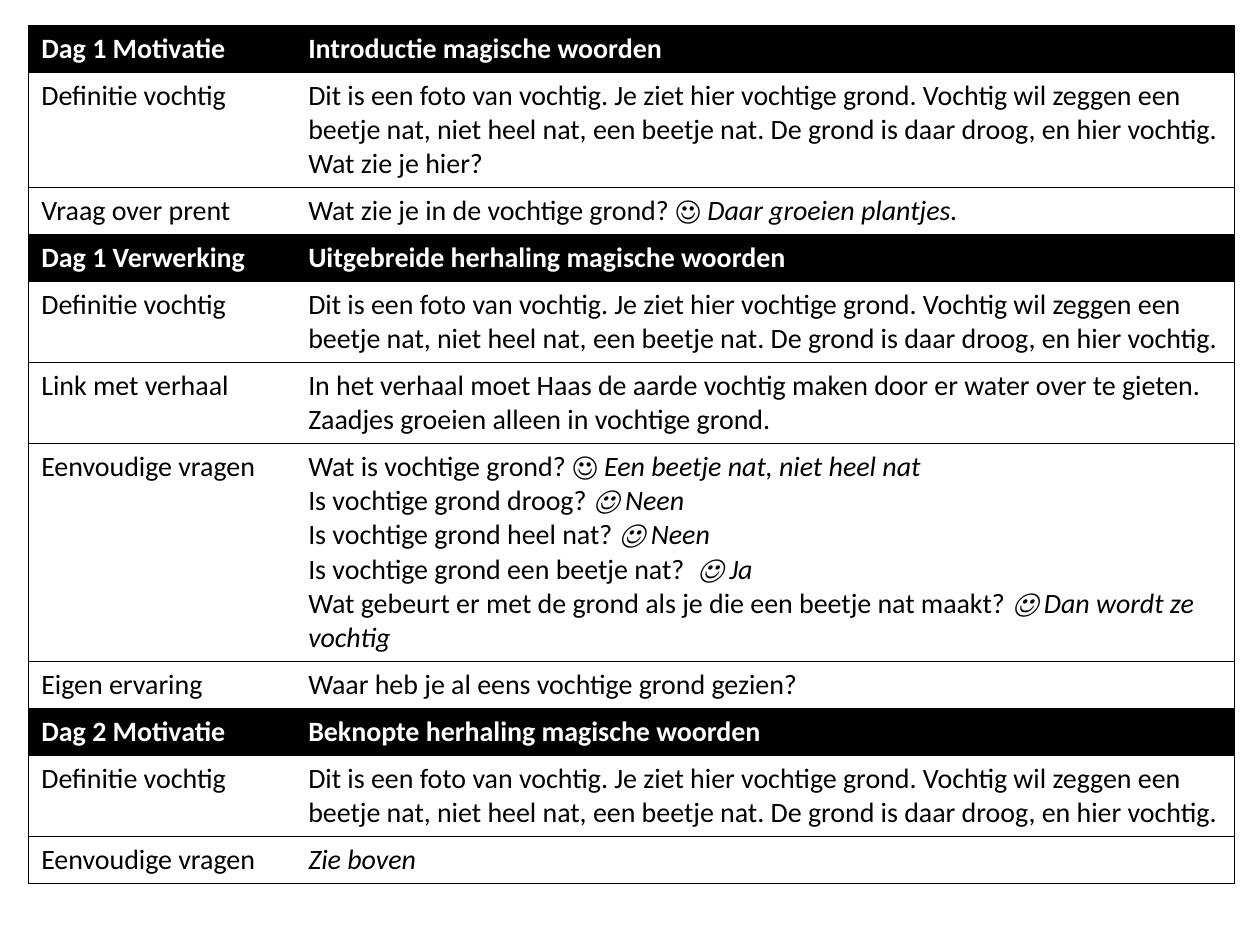
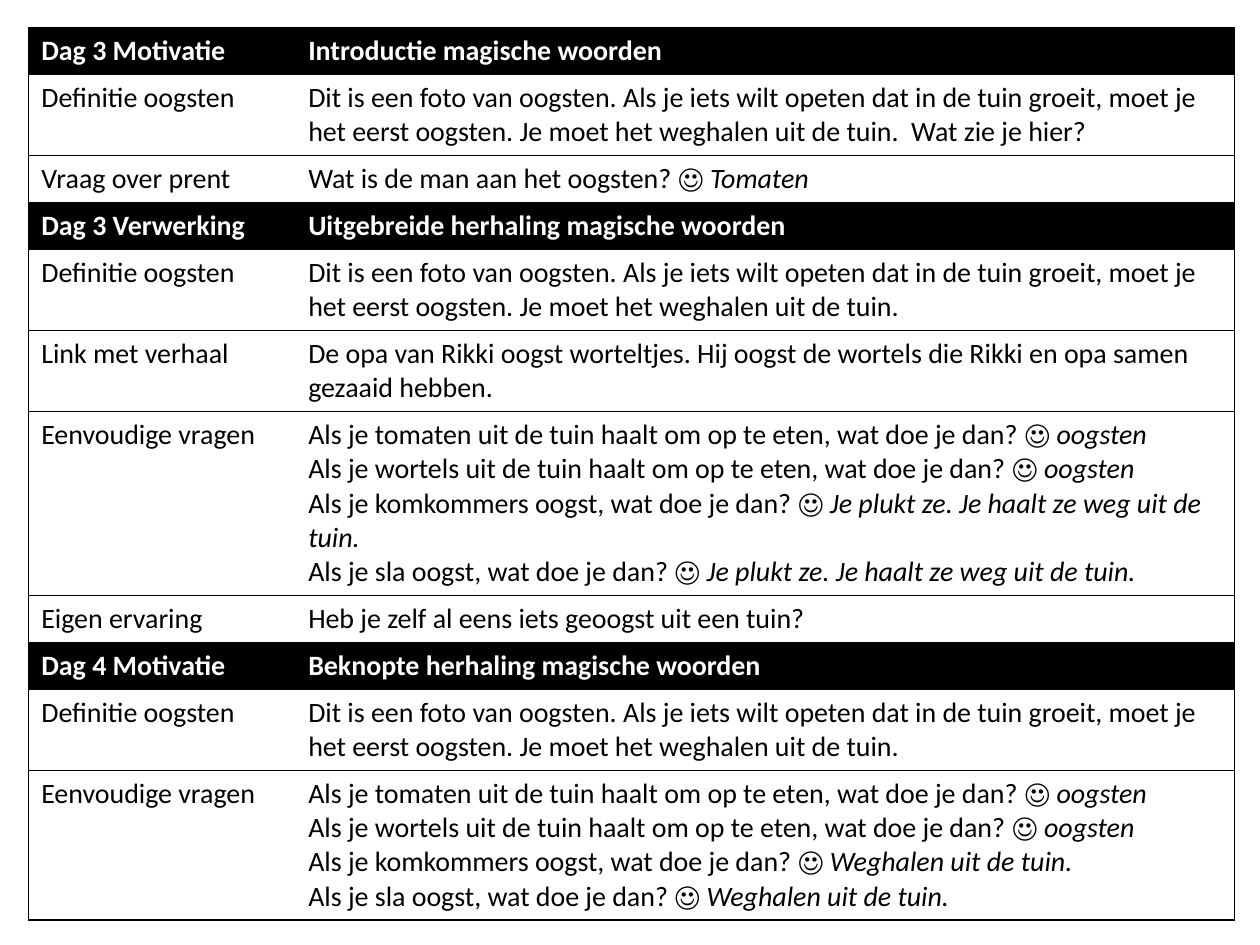
from lxml import etree
from pptx import Presentation
from pptx.dml.color import RGBColor
from pptx.enum.text import MSO_ANCHOR
from pptx.oxml.ns import qn
from pptx.util import Cm, Pt

TOP = MSO_ANCHOR.TOP
BLACK, WHITE = "000000", "FFFFFF"
SMILE = "☺"


def rgb(hex_code):
    return RGBColor.from_string(hex_code)


class Deck:
    """Holds the table style and the current slide."""

    font, size, line_width = "Calibri", Pt(16), Pt(0.75)
    left, columns = Cm(0.58), (Cm(5.38), Cm(18.92))
    min_row = Cm(0.86)  # rows grow with their text

    def __init__(self):
        self.prs = Presentation()
        self.prs.slide_width, self.prs.slide_height = Cm(25.4), Cm(19.05)
        self.s = None

    def slide(self):
        self.s = self.prs.slides.add_slide(self.prs.slide_layouts[6])

    def borders(self, cell, sides):
        """Draw the named sides of a cell and clear the others."""
        tc_pr = cell._tc.get_or_add_tcPr()
        for i, side in enumerate("LRTB"):
            ln = etree.Element(qn(f"a:ln{side}"), w=str(self.line_width))
            if side in sides:
                fill = etree.SubElement(ln, qn("a:solidFill"))
                etree.SubElement(fill, qn("a:srgbClr"), val=BLACK)
            else:
                etree.SubElement(ln, qn("a:noFill"))
            tc_pr.insert(i, ln)

    def text(self, tf, lines, color, bold):
        """Write one paragraph per line; what follows a bar is italic."""
        for i, line in enumerate(lines):
            p = tf.add_paragraph() if i else tf.paragraphs[0]
            p.font.name, p.font.size = self.font, self.size
            p.font.color.rgb, p.font.bold = rgb(color), bold
            plain, _, answer = line.partition("|")
            for part, italic in ((plain, False), (answer, True)):
                if part:
                    r = p.add_run()
                    r.text = part
                    r.font.italic = italic

    def table(self, top, rows):
        """Draw (label, lines, is_header) rows as a two-column table."""
        frame = self.s.shapes.add_table(len(rows), 2, self.left, top,
                                        sum(self.columns),
                                        self.min_row * len(rows))
        tbl = frame.table
        tbl.first_row = tbl.horz_banding = False
        for column, width in zip(tbl.columns, self.columns):
            column.width = width
        for i, (label, lines, is_header) in enumerate(rows):
            back, fore = (BLACK, WHITE) if is_header else (WHITE, BLACK)
            for j, content in enumerate(([label], lines)):
                cell = tbl.cell(i, j)
                cell.vertical_anchor = TOP
                cell.fill.solid()
                cell.fill.fore_color.rgb = rgb(back)
                self.borders(cell, "LTB" if j == 0 else "RTB")
                self.text(cell.text_frame, content, fore, is_header)


def header(day, part, title):
    return f"Dag {day} {part}", [f"{title} magische woorden"], True


def row(label, *lines):
    return label, lines, False


def word_rows(day, word, definition, intro_end, picture, story,
              questions, experience, review):
    """Rows for one word: introduction, extended and short repetition."""
    define = f"Definitie {word}"
    return [
        header(day, "Motivatie", "Introductie"),
        row(define, definition + intro_end),
        row("Vraag over prent", picture),
        header(day, "Verwerking", "Uitgebreide herhaling"),
        row(define, definition),
        row("Link met verhaal", story),
        row("Eenvoudige vragen", *questions),
        row("Eigen ervaring", experience),
        header(day + 1, "Motivatie", "Beknopte herhaling"),
        row(define, definition),
        row("Eenvoudige vragen", *review),
    ]


def harvest_questions(answer):
    """Two questions about the word, two about its meaning."""
    return [
        *(f"Als je {crop} uit de tuin haalt om op te eten, wat doe je dan? "
          f"{SMILE} |oogsten" for crop in ("tomaten", "wortels")),
        *(f"Als je {crop} oogst, wat doe je dan? {SMILE} |{answer}"
          for crop in ("komkommers", "sla")),
    ]


def main():
    deck = Deck()

    # Days 1 and 2: vochtig
    deck.slide()
    deck.table(Cm(0.51), word_rows(
        1, "vochtig",
        "Dit is een foto van vochtig. Je ziet hier vochtige grond. Vochtig "
        "wil zeggen een beetje nat, niet heel nat, een beetje nat. De grond "
        "is daar droog, en hier vochtig.",
        " Wat zie je hier?",
        f"Wat zie je in de vochtige grond? {SMILE} |Daar groeien plantjes.",
        "In het verhaal moet Haas de aarde vochtig maken door er water over "
        "te gieten. Zaadjes groeien alleen in vochtige grond.",
        [f"Wat is vochtige grond? {SMILE}| Een beetje nat, niet heel nat",
         f"Is vochtige grond droog? |{SMILE} Neen",
         f"Is vochtige grond heel nat? |{SMILE} Neen",
         f"Is vochtige grond een beetje nat?  |{SMILE} Ja",
         "Wat gebeurt er met de grond als je die een beetje nat maakt? "
         f"|{SMILE} Dan wordt ze vochtig"],
        "Waar heb je al eens vochtige grond gezien?",
        ["|Zie boven"]))

    # Days 3 and 4: oogsten
    deck.slide()
    deck.table(Cm(0.56), word_rows(
        3, "oogsten",
        "Dit is een foto van oogsten. Als je iets wilt opeten dat in de tuin "
        "groeit, moet je het eerst oogsten. Je moet het weghalen uit de tuin.",
        "  Wat zie je hier?",
        f"Wat is de man aan het oogsten? {SMILE} |Tomaten",
        "De opa van Rikki oogst worteltjes. Hij oogst de wortels die Rikki "
        "en opa samen gezaaid hebben.",
        harvest_questions("Je plukt ze. Je haalt ze weg uit de tuin."),
        "Heb je zelf al eens iets geoogst uit een tuin?",
        harvest_questions("Weghalen uit de tuin.")))

    deck.prs.save("out.pptx")


if __name__ == "__main__":
    main()
